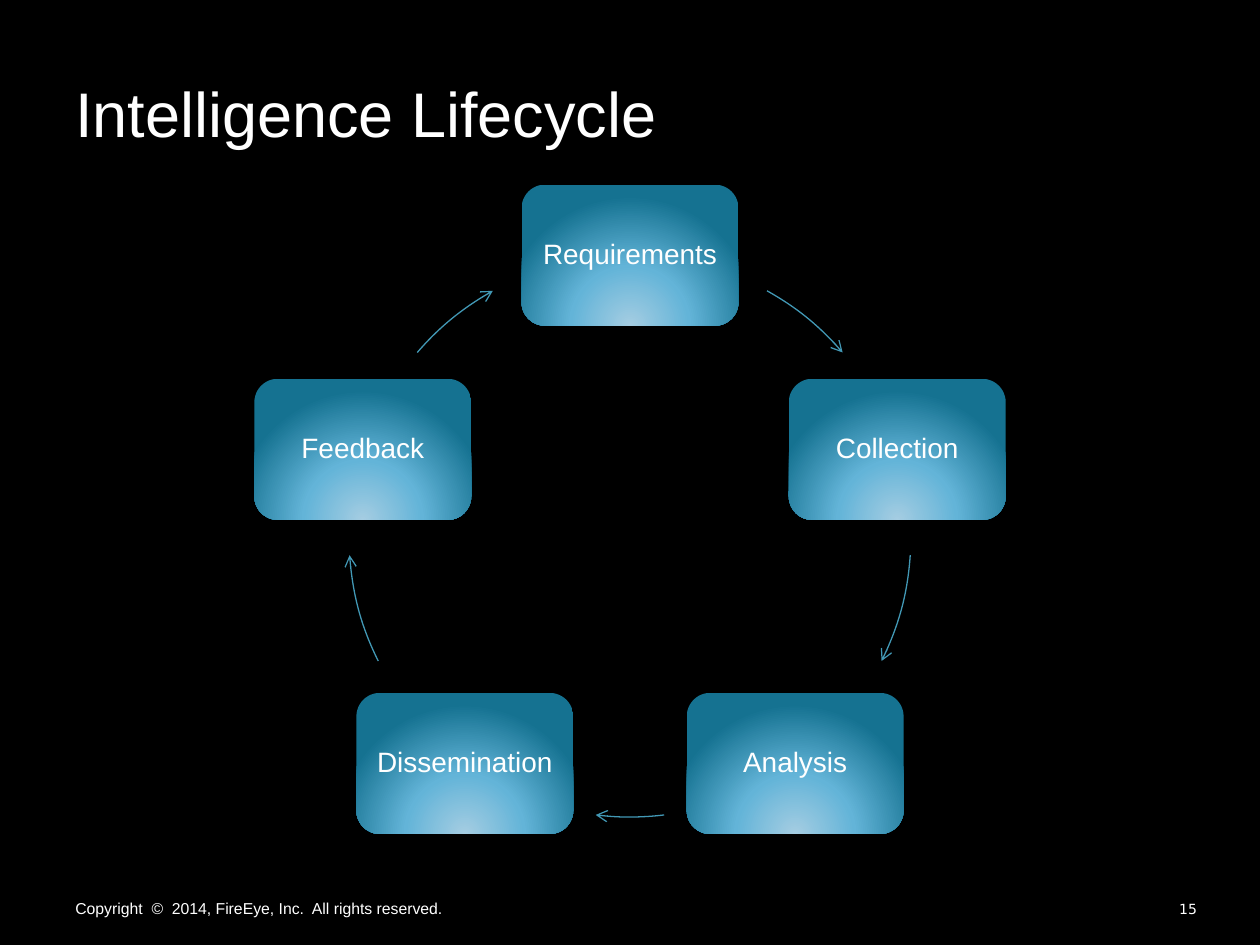
import math

import pptx
import pptx.dml.color
import pptx.enum.shapes
import pptx.enum.text
import pptx.oxml
import pptx.oxml.ns
import pptx.util

COLORS = {
    "back": "000000", "text": "FFFFFF", "arrow": "4298B5",
    "glow": "A5CDE2", "mid": "63B4D8", "edge": "157291", "shade": "000000",
}
WIDE, HIGH = 10, 7.5
STEPS = ["Requirements", "Collection", "Analysis", "Dissemination", "Feedback"]
# Start and end of each arrow, in degrees clockwise from three o'clock
ARCS = [(299.2, 319.2), (3.9, 26.4), (83, 97), (153.6, 176.1), (220.8, 240.8)]

SHAPES = pptx.enum.shapes.MSO_SHAPE
ALIGN = pptx.enum.text.PP_ALIGN
ANCHOR = pptx.enum.text.MSO_ANCHOR
INCH = pptx.util.Inches
NS = pptx.oxml.ns.nsdecls("a")

GLOW = f"""<a:gradFill {NS} rotWithShape="1"><a:gsLst>
<a:gs pos="0"><a:srgbClr val="{COLORS['glow']}"/></a:gs>
<a:gs pos="46000"><a:srgbClr val="{COLORS['mid']}"/></a:gs>
<a:gs pos="100000"><a:srgbClr val="{COLORS['edge']}"/></a:gs></a:gsLst>
<a:path path="circle">
<a:fillToRect l="50000" t="155000" r="50000" b="-55000"/></a:path></a:gradFill>"""
SHADE = f"""<a:effectLst {NS}>
<a:outerShdw blurRad="50800" dist="38100" dir="14700000" rotWithShape="0">
<a:srgbClr val="{COLORS['shade']}"><a:alpha val="60000"/></a:srgbClr>
</a:outerShdw></a:effectLst>"""
HEAD = f'<a:tailEnd {NS} type="arrow"/>'


def color(name):
    return pptx.dml.color.RGBColor.from_string(COLORS[name])


def write(shape, words, size, font="Arial", align=ALIGN.LEFT,
          anchor=ANCHOR.TOP, pad=(0, 0), lead=None):
    """Put one line of text in a shape; pad is the side and the top inset."""
    frame = shape.text_frame
    frame.word_wrap = True
    frame.vertical_anchor = anchor
    frame.margin_left = frame.margin_right = INCH(pad[0])
    frame.margin_top = frame.margin_bottom = INCH(pad[1])
    para = frame.paragraphs[0]
    para.alignment = align
    if lead:
        para.line_spacing = lead
    run = para.add_run()
    run.text = words
    run.font.size = pptx.util.Pt(size)
    run.font.name = font
    run.font.color.rgb = color("text")


def label(slide, box, words, size, **style):
    area = slide.shapes.add_textbox(*map(INCH, box))
    write(area, words, size, **style)


def node(slide, box, words):
    shape = slide.shapes.add_shape(SHAPES.ROUNDED_RECTANGLE, *map(INCH, box))
    shape.line.fill.background()
    props = shape._element.spPr
    props.insert(2, pptx.oxml.parse_xml(GLOW))
    props.append(pptx.oxml.parse_xml(SHADE))
    write(shape, words, 16, align=ALIGN.CENTER, anchor=ANCHOR.MIDDLE,
          pad=(0.07, 0.07), lead=0.9)


def arrow(slide, box, start, end):
    """Draw the part of the ring in box between two angles."""
    arc = slide.shapes.add_shape(SHAPES.ARC, *map(INCH, box))
    arc.adjustments[0] = start * 0.6
    arc.adjustments[1] = end * 0.6
    arc.shadow.inherit = False
    arc.fill.background()
    arc.line.color.rgb = color("arrow")
    arc.line.width = pptx.util.Pt(0.75)
    arc.line._get_or_add_ln().append(pptx.oxml.parse_xml(HEAD))


def cycle(slide, box):
    """Set the steps evenly round the ring that fills box."""
    left, top, size, _ = box
    half = size / 2
    wide, high = size * 0.386, size * 0.251
    for i, (words, (start, end)) in enumerate(zip(STEPS, ARCS)):
        turn = math.radians(360 / len(STEPS) * i - 90)
        x = left + half + half * math.cos(turn)
        y = top + half + half * math.sin(turn)
        node(slide, (x - wide / 2, y - high / 2, wide, high), words)
        arrow(slide, box, start, end)


def footer(slide, box):
    left, top, wide, high = box
    label(slide, (left, top + high * 0.1, wide * 0.74, high * 0.76),
          "Copyright  ©  2014, FireEye, Inc.  All rights reserved.", 9,
          pad=(0.1, 0.05))
    label(slide, (left + wide * 0.54, top, wide * 0.46, high), "15", 8,
          font="DejaVu Sans", align=ALIGN.RIGHT, anchor=ANCHOR.MIDDLE)


def main():
    deck = pptx.Presentation()
    deck.slide_width, deck.slide_height = INCH(WIDE), INCH(HIGH)
    slide = deck.slides.add_slide(deck.slide_layouts[6])
    slide.background.fill.solid()
    slide.background.fill.fore_color.rgb = color("back")
    edge = WIDE * 0.05
    footer(slide, (edge, HIGH * 0.94, WIDE * 0.9, HIGH * 0.044))
    label(slide, (edge, 0.29, WIDE * 0.9, HIGH * 0.12),
          "Intelligence Lifecycle", 36, anchor=ANCHOR.BOTTOM, pad=(0.1, 0))
    ring = 4.46
    cycle(slide, ((WIDE - ring) / 2, HIGH * 0.27, ring, ring))
    deck.save("out.pptx")


if __name__ == "__main__":
    main()
